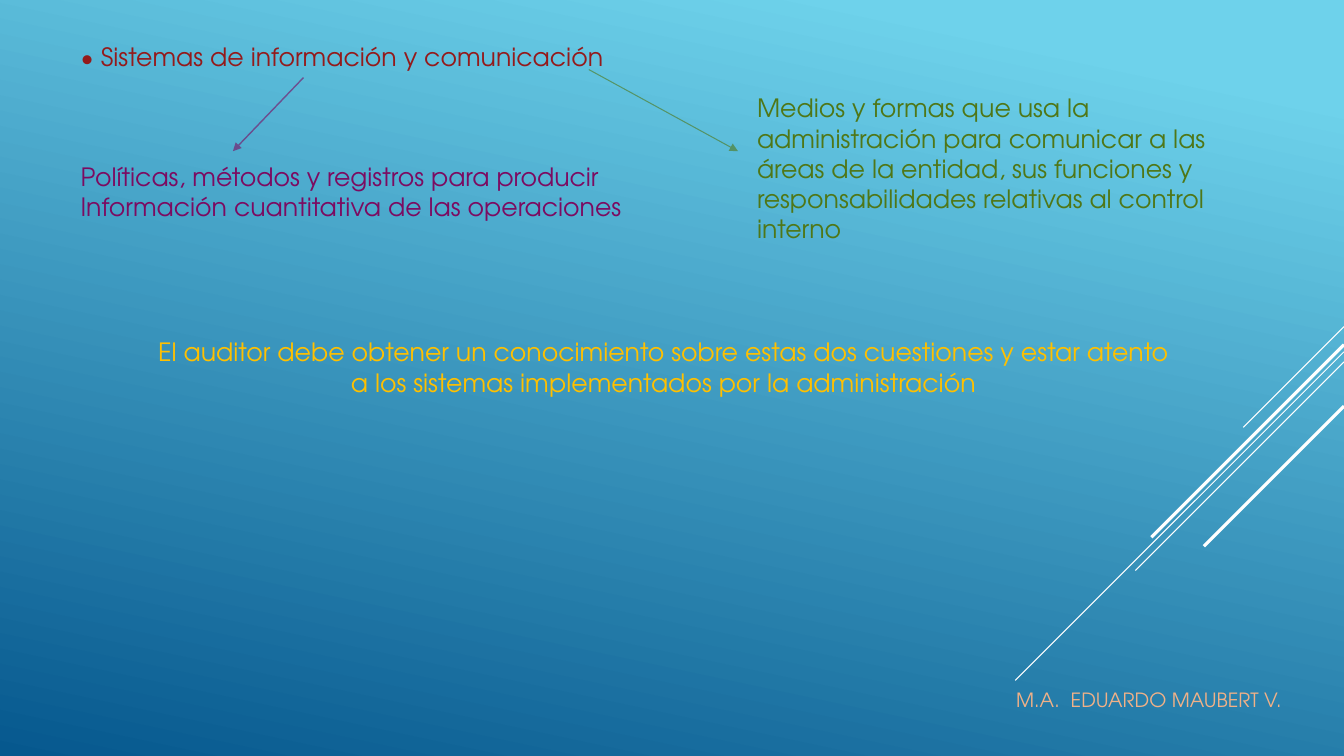
from lxml.etree import SubElement
from pptx import Presentation
from pptx.dml.color import RGBColor
from pptx.enum.shapes import MSO_CONNECTOR
from pptx.enum.text import MSO_ANCHOR, MSO_AUTO_SIZE, PP_ALIGN
from pptx.oxml.ns import qn
from pptx.util import Inches, Pt

FONT = "TeX Gyre Adventor"
WIDTH, HEIGHT = 13.33, 7.5
SKY = RGBColor(0x6E, 0xD2, 0xEB)
DEEP = RGBColor(0x06, 0x58, 0x8E)
WHITE = RGBColor(0xFF, 0xFF, 0xFF)
RED = RGBColor(0x94, 0x1A, 0x1B)
PEACH = RGBColor(0xF1, 0xB1, 0x87)
PLUM = RGBColor(0x7C, 0x0B, 0x61)
GREEN = RGBColor(0x4F, 0x77, 0x17)
GOLD = RGBColor(0xFF, 0xC0, 0x00)

# Top at the right edge, length along each axis, line width
STREAKS = [
    (3.24, 1, 0.75),
    (3.49, 3.26, 0.75),
    (3.59, 2.07, 0.75),
    (3.42, 1.91, 2.25),
    (4.03, 1.39, 2.25),
]


def paint_back(slide):
    fill = slide.background.fill
    fill.gradient()
    fill.gradient_angle = 258  # counter-clockwise
    for stop, color, place in zip(fill.gradient_stops, (SKY, DEEP), (0.1, 1)):
        stop.color.rgb = color
        stop.position = place


def add_line(slide, start, end, color, width):
    points = [Inches(v) for v in (*start, *end)]
    line = slide.shapes.add_connector(MSO_CONNECTOR.STRAIGHT, *points)
    line.line.color.rgb = color
    line.line.width = Pt(width)
    SubElement(line._element.spPr, qn("a:effectLst"))
    return line


def add_arrow(slide, start, end, color, width):
    """Draw a line at 60 % opacity with a triangle at its end."""
    arrow = add_line(slide, start, end, color, width)
    stroke = arrow.line._get_or_add_ln()
    tint = stroke.find(".//" + qn("a:srgbClr"))
    SubElement(tint, qn("a:alpha"), val="60000")
    SubElement(stroke, qn("a:tailEnd"), type="triangle")


def set_text(shape, box, text, color, size=18, align=PP_ALIGN.LEFT, wrap=True):
    shape.left, shape.top, shape.width, shape.height = map(Inches, box)
    frame = shape.text_frame
    frame.text = text
    frame.word_wrap = wrap
    frame.auto_size = MSO_AUTO_SIZE.SHAPE_TO_FIT_TEXT
    frame.vertical_anchor = MSO_ANCHOR.TOP
    for para in frame.paragraphs:
        para.alignment = align
        para.font.name = FONT
        para.font.size = Pt(size)
        para.font.color.rgb = color


def add_text(slide, box, text, color, **style):
    shape = slide.shapes.add_textbox(*map(Inches, box))
    set_text(shape, box, text, color, **style)


def main():
    deck = Presentation()
    deck.slide_width, deck.slide_height = Inches(WIDTH), Inches(HEIGHT)
    slide = deck.slides.add_slide(deck.slide_layouts[5])
    paint_back(slide)
    for top, span, width in STREAKS:
        add_line(slide, (WIDTH, top), (WIDTH - span, top + span), WHITE, width)

    set_text(slide.shapes.title, (0.7, 0.36, 11.76, 0.4),
             "• Sistemas de información y comunicación", RED)
    add_text(slide, (9.98, 6.78, 2.88, 0.34),
             "M.A.  EDUARDO MAUBERT V.", PEACH, size=14)
    add_arrow(slide, (3.01, 0.77), (2.31, 1.5), PLUM, 1)
    add_text(slide, (0.7, 1.55, 5.65, 0.71),
             "Políticas, métodos y registros para producir\n"
             "Información cuantitativa de las operaciones", PLUM, wrap=False)
    add_arrow(slide, (5.84, 0.69), (7.32, 1.5), GREEN, 0.75)
    add_text(slide, (7.41, 0.87, 4.98, 1.62),
             "Medios y formas que usa la administración para comunicar a las "
             "áreas de la entidad, sus funciones y responsabilidades "
             "relativas al control interno", GREEN)
    add_text(slide, (1.44, 3.29, 10.28, 0.71),
             "El auditor debe obtener un conocimiento sobre estas dos "
             "cuestiones y estar atento a los sistemas implementados por la "
             "administración", GOLD, align=PP_ALIGN.CENTER)
    deck.save("out.pptx")


if __name__ == "__main__":
    main()
